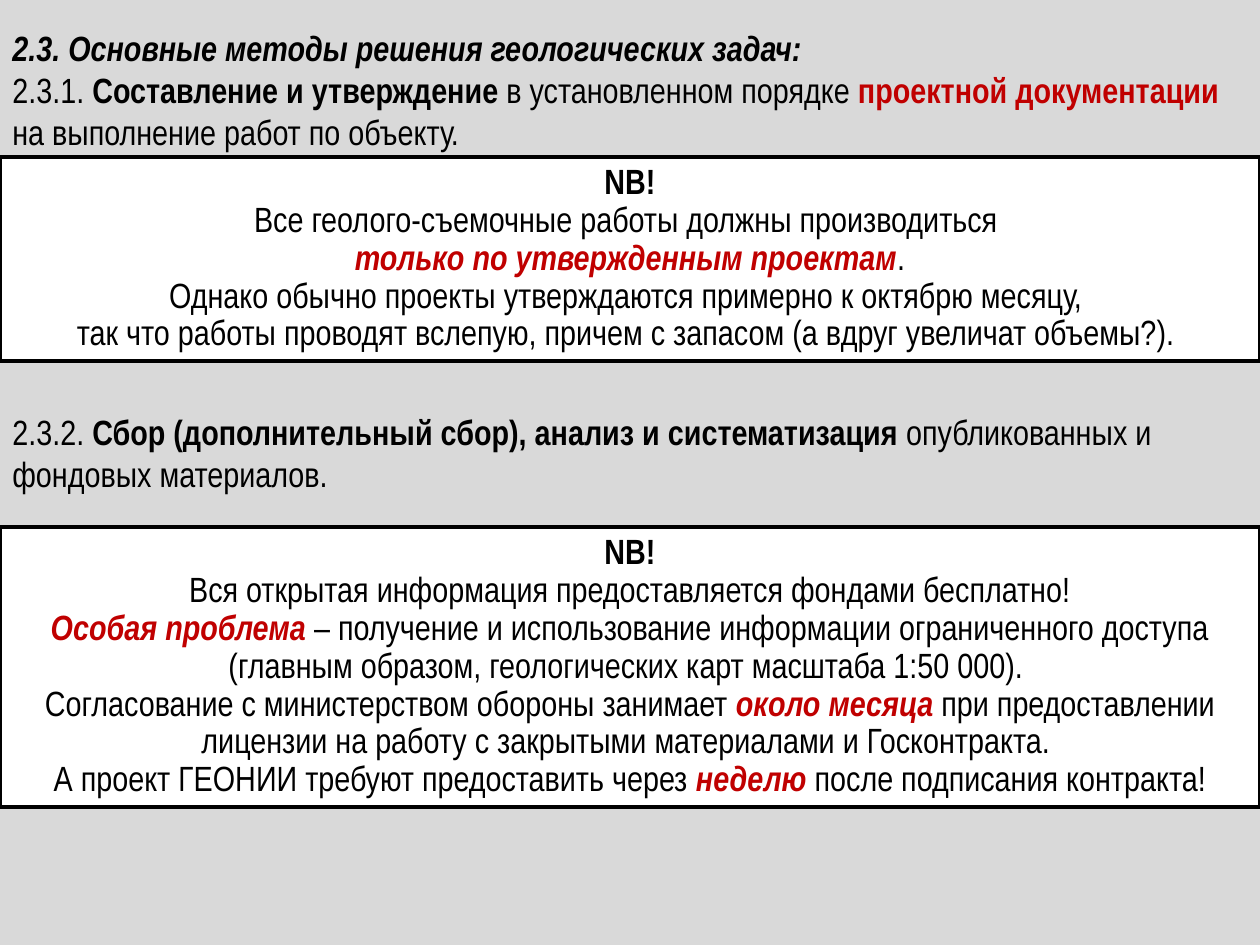
from pptx import Presentation
from pptx.dml.color import RGBColor
from pptx.enum.shapes import MSO_SHAPE
from pptx.enum.text import MSO_ANCHOR, MSO_AUTO_SIZE, PP_ALIGN
from pptx.util import Emu, Pt

RECTANGLE = MSO_SHAPE.RECTANGLE
TOP, MIDDLE = MSO_ANCHOR.TOP, MSO_ANCHOR.MIDDLE
FIT_SHAPE = MSO_AUTO_SIZE.SHAPE_TO_FIT_TEXT
LEFT, CENTER = PP_ALIGN.LEFT, PP_ALIGN.CENTER

PX_PER_INCH = 126
SLIDE_W, SLIDE_H = 1260, 945
COLORS = {"background": "D9D9D9", "text": "000000", "accent": "C00000",
          "note": "FFFFFF", "border": "000000"}

BASE_FONT = {"name": "Arial Narrow", "size": Pt(20), "bold": False, "italic": False}
STYLES = {
    "plain": ({}, "text"),
    "bold": ({"bold": True}, "text"),
    "heading": ({"bold": True, "italic": True}, "text"),
    "key": ({"bold": True}, "accent"),
    "warning": ({"bold": True, "italic": True}, "accent"),
}
METHOD_PARAGRAPH = {"alignment": LEFT}
NOTE_PARAGRAPH = {"alignment": CENTER, "line_spacing": 0.9}

DOCUMENTATION = [
    [("heading", "2.3. Основные методы решения геологических задач:")],
    [("plain", "2.3.1. "), ("bold", "Составление и утверждение "),
     ("plain", "в установленном порядке "), ("key", "проектной документации "),
     ("plain", "на выполнение работ по объекту.")],
]
COLLECTION = [
    [("plain", "2.3.2. "),
     ("bold", "Сбор (дополнительный сбор), анализ и систематизация "),
     ("plain", "опубликованных и фондовых материалов.")],
]
PROJECT_NOTE = [
    [("bold", "NB!")],
    [("plain", "Все геолого-съемочные работы должны производиться ")],
    [("warning", "только по утвержденным проектам"), ("plain", ".")],
    [("plain", "Однако обычно проекты утверждаются примерно к октябрю месяцу, ")],
    [("plain", "так что работы проводят вслепую, причем с запасом "
               "(а вдруг увеличат объемы?). ")],
]
ACCESS_NOTE = [
    [("bold", "NB!")],
    [("plain", "Вся открытая информация предоставляется фондами бесплатно!")],
    [("warning", "Особая проблема "),
     ("plain", "– получение и использование информации ограниченного доступа "
               "(главным образом, геологических карт масштаба 1:50 000). ")],
    [("plain", "Согласование с министерством обороны занимает "),
     ("warning", "около месяца "),
     ("plain", "при предоставлении лицензии на работу с закрытыми материалами "
               "и Госконтракта. ")],
    [("plain", "А проект ГЕОНИИ требуют предоставить через "),
     ("warning", "неделю"), ("plain", " после подписания контракта!")],
]


def px(length):
    return Emu(round(length * 914400 / PX_PER_INCH))


def color(key):
    return RGBColor.from_string(COLORS[key])


def set_all(target, values):
    for attribute, value in values.items():
        setattr(target, attribute, value)


def write_text(frame, paragraphs, paragraph_format, anchor):
    set_all(frame, {"word_wrap": True, "auto_size": FIT_SHAPE,
                    "vertical_anchor": anchor})
    for index, phrases in enumerate(paragraphs):
        paragraph = frame.paragraphs[0] if index == 0 else frame.add_paragraph()
        set_all(paragraph, paragraph_format)
        for style, wording in phrases:
            run = paragraph.add_run()
            run.text = wording
            emphasis, ink = STYLES[style]
            set_all(run.font, {**BASE_FONT, **emphasis})
            run.font.color.rgb = color(ink)


def add_method(slide, box, paragraphs):
    method = slide.shapes.add_textbox(*map(px, box))
    write_text(method.text_frame, paragraphs, METHOD_PARAGRAPH, TOP)


def add_note(slide, box, paragraphs):
    """Add a bordered full-width remark."""
    note = slide.shapes.add_shape(RECTANGLE, *map(px, box))
    note.shadow.inherit = False
    note.fill.solid()
    note.fill.fore_color.rgb = color("note")
    note.line.color.rgb = color("border")
    note.line.width = Pt(2.25)
    write_text(note.text_frame, paragraphs, NOTE_PARAGRAPH, MIDDLE)


def main():
    deck = Presentation()
    deck.slide_width, deck.slide_height = px(SLIDE_W), px(SLIDE_H)
    blank_layout = deck.slide_layouts[6]
    slide = deck.slides.add_slide(blank_layout)
    slide.background.fill.solid()
    slide.background.fill.fore_color.rgb = color("background")

    add_method(slide, (0, 20, SLIDE_W, 140), DOCUMENTATION)
    add_method(slide, (0, 404, SLIDE_W, 97), COLLECTION)
    add_note(slide, (0, 157, SLIDE_W, 204), PROJECT_NOTE)
    add_note(slide, (0, 527, SLIDE_W, 280), ACCESS_NOTE)
    deck.save("out.pptx")


if __name__ == "__main__":
    main()
